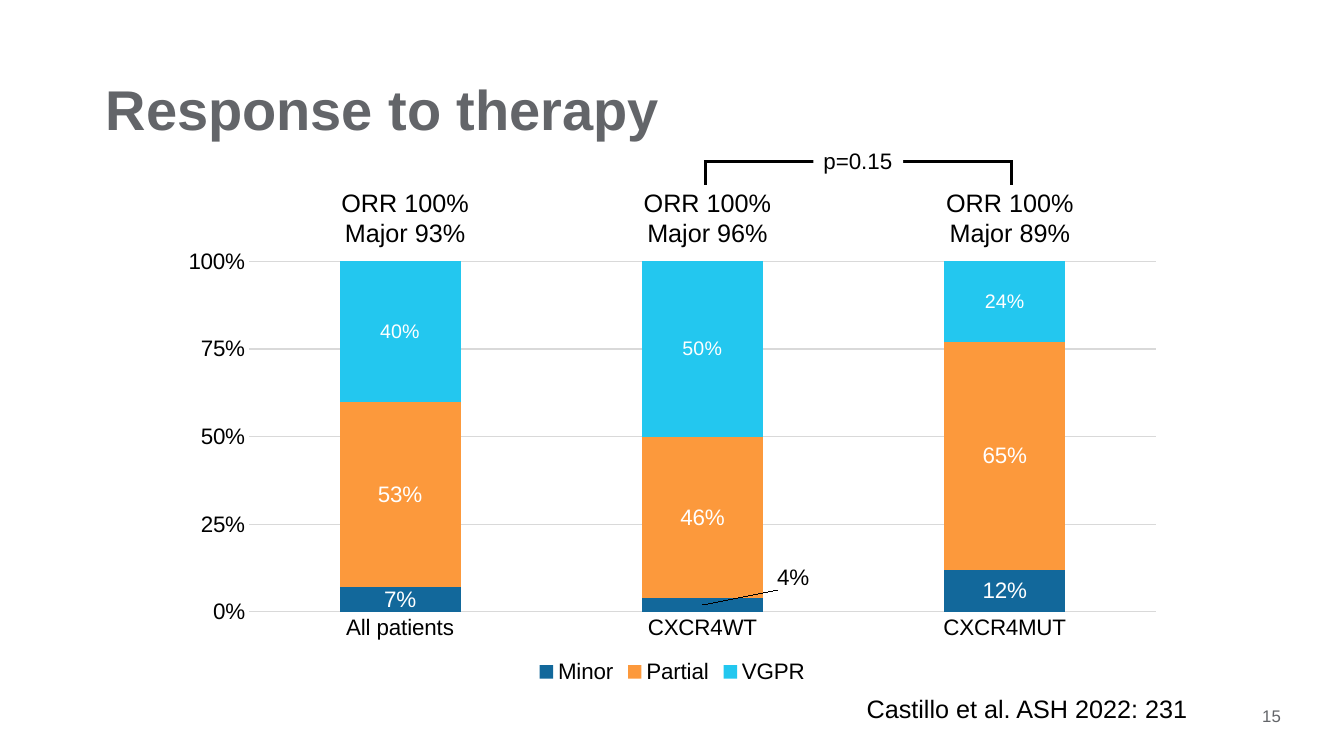
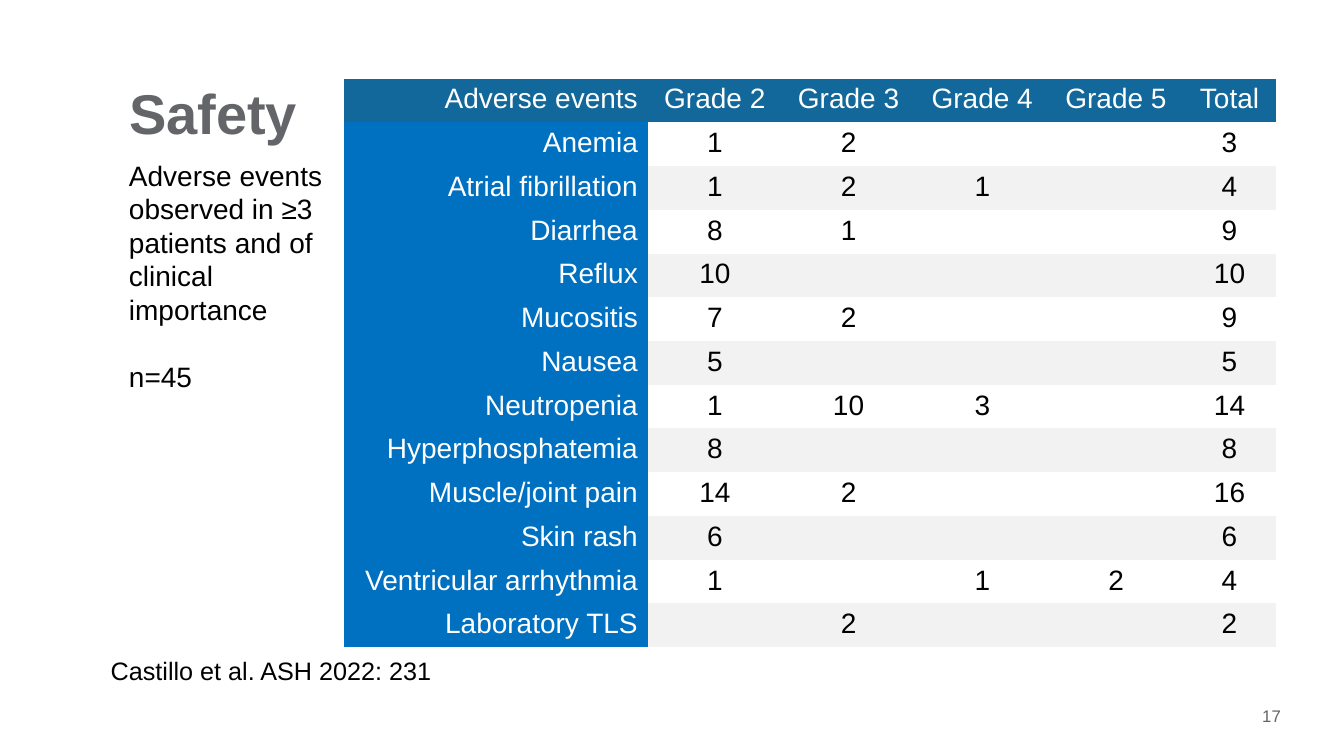
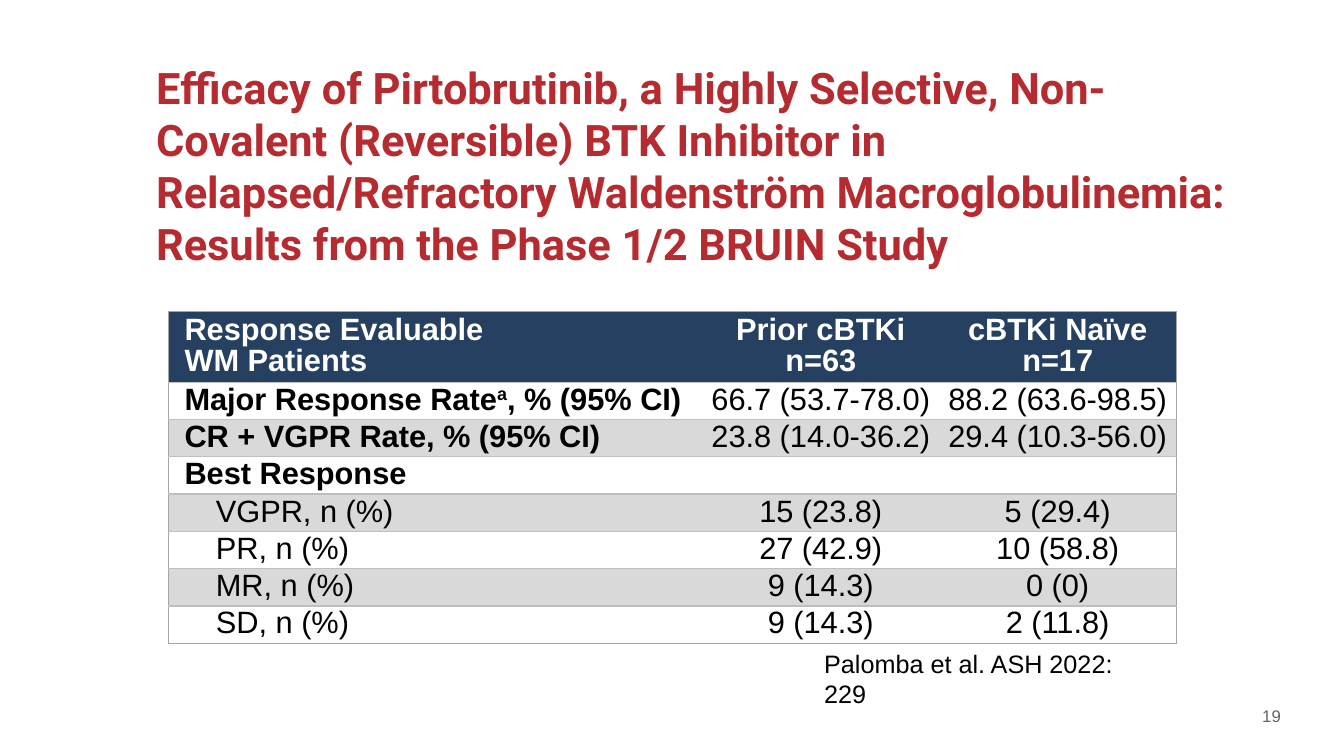
import pptx
import pptx.chart.data
import pptx.dml.color
import pptx.enum.chart
import pptx.enum.shapes
import pptx.enum.text
import pptx.oxml
import pptx.oxml.ns
import pptx.util
from lxml import etree

Cm, Pt = pptx.util.Cm, pptx.util.Pt
RGB = pptx.dml.color.RGBColor
ALIGN = pptx.enum.text.PP_ALIGN
ANCHOR = pptx.enum.text.MSO_ANCHOR
qn = pptx.oxml.ns.qn

# Shared look
BLACK, WHITE = RGB(0, 0, 0), RGB(0xFF, 0xFF, 0xFF)
GREY, RED = RGB(0x63, 0x65, 0x69), RGB(0xB6, 0x2B, 0x30)
TEAL, ORANGE, SKY = RGB(0x12, 0x68, 0x9B), RGB(0xFC, 0x99, 0x3C), RGB(0x23, 0xC7, 0xEF)
BLUE, NAVY = RGB(0, 0x70, 0xC0), RGB(0x25, 0x40, 0x61)
PALE, BAND, GRID = RGB(0xF2, 0xF2, 0xF2), RGB(0xD9, 0xD9, 0xD9), RGB(0xD9, 0xD9, 0xD9)
EDGE, RULE = RGB(0xA6, 0xA6, 0xA6), RGB(0xBF, 0xBF, 0xBF)
FONT = "Arial"
NO_STYLE = "{2D5ABB26-0587-4C30-8999-92F81FD0307C}"

# Content
GROUPS = ["All patients", "CXCR4WT", "CXCR4MUT"]
RESPONSES = [  # name, values, colour, label size
    ("Minor", (0.07, 0.04, 0.12), TEAL, 16),
    ("Partial", (0.53, 0.46, 0.65), ORANGE, 16),
    ("VGPR", (0.4, 0.5, 0.24), SKY, 14),
]
OVERALL = ["ORR 100%\nMajor 93%", "ORR 100%\nMajor 96%", "ORR 100%\nMajor 89%"]
EVENTS = [
    ("Adverse events", "Grade 2", "Grade 3", "Grade 4", "Grade 5", "Total"),
    ("Anemia", "1", "2", "", "", "3"),
    ("Atrial fibrillation", "1", "2", "1", "", "4"),
    ("Diarrhea", "8", "1", "", "", "9"),
    ("Reflux", "10", "", "", "", "10"),
    ("Mucositis", "7", "2", "", "", "9"),
    ("Nausea", "5", "", "", "", "5"),
    ("Neutropenia", "1", "10", "3", "", "14"),
    ("Hyperphosphatemia", "8", "", "", "", "8"),
    ("Muscle/joint pain", "14", "2", "", "", "16"),
    ("Skin rash", "6", "", "", "", "6"),
    ("Ventricular arrhythmia", "1", "", "1", "2", "4"),
    ("Laboratory TLS", "", "2", "", "", "2"),
]
EVENTS_NOTE = ("Adverse events observed in ≥3 patients and of clinical importance\n"
               "n=45")
EFFICACY_TITLE = ("Efficacy of Pirtobrutinib, a Highly Selective, Non-Covalent (Reversible) "
                  "BTK Inhibitor in Relapsed/Refractory Waldenström Macroglobulinemia: "
                  "Results from the Phase 1/2 BRUIN Study")
EFFICACY = [  # ^ encloses a superscript
    ("Response Evaluable\nWM Patients", "Prior cBTKi\nn=63", "cBTKi Naïve\nn=17"),
    ("Major Response Rate^a^, % (95% CI)", "66.7 (53.7-78.0)", "88.2 (63.6-98.5)"),
    ("CR + VGPR Rate, % (95% CI)", "23.8 (14.0-36.2)", "29.4 (10.3-56.0)"),
    ("Best Response", "", ""),
    ("VGPR, n (%)", "15 (23.8)", "5 (29.4)"),
    ("PR, n (%)", "27 (42.9)", "10 (58.8)"),
    ("MR, n (%)", "9 (14.3)", "0 (0)"),
    ("SD, n (%)", "9 (14.3)", "2 (11.8)"),
]
LAST_HEADING_ROW = 3


def style(font, size, color=BLACK, bold=False, name=FONT):
    font.name, font.size, font.bold = name, Pt(size), bold
    font.color.rgb = color


def write(frame, text, size, color=BLACK, align=ALIGN.LEFT, bold=False, name=FONT, spacing=None):
    frame.text = text
    for paragraph in frame.paragraphs:
        paragraph.alignment = align
        paragraph.line_spacing = spacing
        parts = paragraph.text.split("^")
        paragraph.text = parts[0]
        for part in parts[1:]:
            paragraph.add_run().text = part
        for position, run in enumerate(paragraph.runs):
            style(run.font, size, color, bold, name)
            if position % 2:
                run.font._element.set("baseline", "30000")


def add_text(slide, text, box, size, wrap=False, **look):
    frame = slide.shapes.add_textbox(*map(Cm, box)).text_frame
    frame.word_wrap = wrap
    write(frame, text, size, **look)
    return frame


def add_slide(deck, number, title, box, size=40, color=GREY, name=FONT,
              anchor=ANCHOR.MIDDLE, spacing=0.9):
    slide = deck.slides.add_slide(deck.slide_layouts[5])
    heading = slide.shapes.title
    heading.left, heading.top, heading.width, heading.height = map(Cm, box)
    frame = heading.text_frame
    frame.auto_size = pptx.enum.text.MSO_AUTO_SIZE.NONE
    frame.word_wrap, frame.vertical_anchor = True, anchor
    write(frame, title, size, color, bold=True, name=name, spacing=spacing)
    add_text(slide, str(number), (25.55, 17.65, 6.98, 0.76), 12, wrap=True,
             color=GREY, align=ALIGN.RIGHT)
    return slide


def add_citation(slide, text, left, top):
    add_text(slide, text, (left, top, 8.66, 1.02), 18)


def add_plain_table(slide, rows, left, top, widths, heights):
    table = slide.shapes.add_table(len(rows), len(widths), Cm(left), Cm(top),
                                   Cm(sum(widths)), Cm(sum(heights))).table
    table._tbl.tblPr.find(qn("a:tableStyleId")).text = NO_STYLE
    table.first_row = table.horz_banding = False
    for column, width in zip(table.columns, widths):
        column.width = Cm(width)
    for row, height in zip(table.rows, heights):
        row.height = Cm(height)
    return table


def fill_cell(cell, color):
    cell.fill.solid()
    cell.fill.fore_color.rgb = color


def add_border(cell, side, color):
    line = etree.SubElement(cell._tc.get_or_add_tcPr(), qn("a:ln" + side), w=str(Pt(1)))
    solid = etree.SubElement(line, qn("a:solidFill"))
    etree.SubElement(solid, qn("a:srgbClr"), val=str(color))


def set_layout(parent, position, **values):
    for old in parent.findall(qn("c:layout")):
        parent.remove(old)
    layout = etree.Element(qn("c:layout"))
    manual = etree.SubElement(layout, qn("c:manualLayout"))
    for tag, value in values.items():
        etree.SubElement(manual, qn("c:" + tag), val=str(value))
    parent.insert(position, layout)


def add_response_chart(slide):
    data = pptx.chart.data.CategoryChartData(number_format="0%")
    data.categories = GROUPS
    for name, values, _, _ in RESPONSES:
        data.add_series(name, values)
    chart = slide.shapes.add_chart(pptx.enum.chart.XL_CHART_TYPE.COLUMN_STACKED,
                                   Cm(4.24), Cm(6.02), Cm(25.4), Cm(11.33), data).chart
    style(chart.font, 16)
    chart.has_title = False
    chart.has_legend = True
    chart.legend.position = pptx.enum.chart.XL_LEGEND_POSITION.BOTTOM
    chart.legend.include_in_layout = False
    style(chart.legend.font, 16)

    # Axes
    shares = chart.value_axis
    shares.minimum_scale, shares.maximum_scale, shares.major_unit = 0, 1, 0.25
    shares.tick_labels.number_format = "0%"
    shares.tick_labels.number_format_is_linked = False
    shares.format.line.fill.background()
    grid = shares.major_gridlines.format.line
    for line in (grid, chart.category_axis.format.line):
        line.color.rgb, line.width = GRID, Pt(0.75)
    for axis in (shares, chart.category_axis):
        axis.major_tick_mark = pptx.enum.chart.XL_TICK_MARK.NONE
        style(axis.tick_labels.font, 16)

    # Columns and their labels
    plot = chart.plots[0]
    plot.gap_width, plot.overlap, plot.vary_by_categories = 150, 100, False
    for series, (_, _, color, size) in zip(plot.series, RESPONSES):
        series.format.fill.solid()
        series.format.fill.fore_color.rgb = color
        labels = series.data_labels
        labels.show_value = True
        labels.number_format, labels.number_format_is_linked = "0%", False
        labels.position = pptx.enum.chart.XL_LABEL_POSITION.CENTER
        style(labels.font, size, WHITE)
    thin_label = plot.series[0].points[1].data_label
    style(thin_label.font, 16)
    thin_label.position = pptx.enum.chart.XL_LABEL_POSITION.CENTER
    set_layout(thin_label._get_or_add_dLbl(), 1, x=0.09, y=-0.06)
    set_layout(chart._chartSpace.chart.plotArea, 0, layoutTarget="inner", xMode="edge",
               yMode="edge", x=0.08, y=0.05, w=0.9, h=0.78)


def build_response(deck):
    slide = add_slide(deck, 15, "Response to therapy", (2.41, 1.9, 27.84, 1.88))
    add_response_chart(slide)
    for column, text in enumerate(OVERALL):
        add_text(slide, text, (8.33 + 7.62 * column, 4.6, 3.76, 1.8), 18, align=ALIGN.CENTER)

    # Bracket over the two compared groups
    left, right, top, bottom = 17.78, 25.5, 4.06, 4.65
    for ends in ((left - 0.04, top, right + 0.04, top),
                 (left, top, left, bottom), (right, top, right, bottom)):
        line = slide.shapes.add_connector(pptx.enum.shapes.MSO_CONNECTOR.STRAIGHT,
                                          *map(Cm, ends))
        line.line.color.rgb, line.line.width = BLACK, Pt(2.25)
        etree.SubElement(line._element.spPr, qn("a:effectLst"))
    p_value = slide.shapes.add_shape(pptx.enum.shapes.MSO_SHAPE.RECTANGLE,
                                     Cm(20.5), Cm(3.58), Cm(2.26), Cm(0.94))
    p_value.shadow.inherit = False
    p_value.fill.solid()
    p_value.fill.fore_color.rgb = WHITE
    p_value.line.fill.background()
    p_value.text_frame.word_wrap = False
    write(p_value.text_frame, "p=0.15", 16)
    add_citation(slide, "Castillo et al. ASH 2022: 231", 21.59, 17.35)


def build_safety(deck):
    slide = add_slide(deck, 17, "Safety", (3, 1.98, 27.84, 1.88))
    table = add_plain_table(slide, EVENTS, 8.66, 1.98, [7.67] + [3.37] * 4 + [2.35],
                            [1.1] * len(EVENTS))
    for r, row in enumerate(EVENTS):
        for c, text in enumerate(row):
            cell = table.cell(r, c)
            heading = r == 0 or c == 0
            write(cell.text_frame, text, 20, WHITE if heading else BLACK,
                  ALIGN.CENTER if c else ALIGN.RIGHT)
            band = WHITE if r % 2 else PALE
            fill_cell(cell, TEAL if r == 0 else BLUE if c == 0 else band)
    note = add_text(slide, EVENTS_NOTE, (3, 3.86, 5.6, 6.25), 20, wrap=True)
    note.paragraphs[1].space_before = Pt(24)
    add_citation(slide, "Castillo et al. ASH 2022: 231", 2.54, 16.38)


def build_efficacy(deck):
    slide = add_slide(deck, 19, EFFICACY_TITLE, (3.68, 1.4, 27.84, 6.45), 31, RED,
                      "Roboto", ANCHOR.TOP, None)
    table = add_plain_table(slide, EFFICACY, 4.24, 7.85, [13.46, 5.97, 5.97],
                            [1.78] + [0.94] * (len(EFFICACY) - 1))
    last_row, last_column = len(EFFICACY) - 1, len(EFFICACY[0]) - 1
    for r, row in enumerate(EFFICACY):
        for c, text in enumerate(row):
            cell = table.cell(r, c)
            bold = r == 0 or (c == 0 and r <= LAST_HEADING_ROW)
            write(cell.text_frame, text, 22, BLACK if r else WHITE,
                  ALIGN.CENTER if c else ALIGN.LEFT, bold, spacing=0.9)
            cell.vertical_anchor = ANCHOR.MIDDLE
            indent = 0.1 if c else 0.41 if r <= LAST_HEADING_ROW else 1.2
            cell.margin_left, cell.margin_right = Cm(indent), Cm(0.1)
            cell.margin_top = cell.margin_bottom = Cm(0.05)
            if c == 0:
                add_border(cell, "L", EDGE)
            if c == last_column:
                add_border(cell, "R", EDGE)
            add_border(cell, "T", RULE if r else EDGE)
            add_border(cell, "B", EDGE if r == last_row else RULE)
            fill_cell(cell, NAVY if r == 0 else WHITE if r % 2 else BAND)
    add_citation(slide, "Palomba et al. ASH 2022: 229", 20.52, 16.21)


def main():
    deck = pptx.Presentation()
    deck.slide_width, deck.slide_height = Cm(33.87), Cm(19.05)
    build_response(deck)
    build_safety(deck)
    build_efficacy(deck)
    deck.save("out.pptx")


if __name__ == "__main__":
    main()
